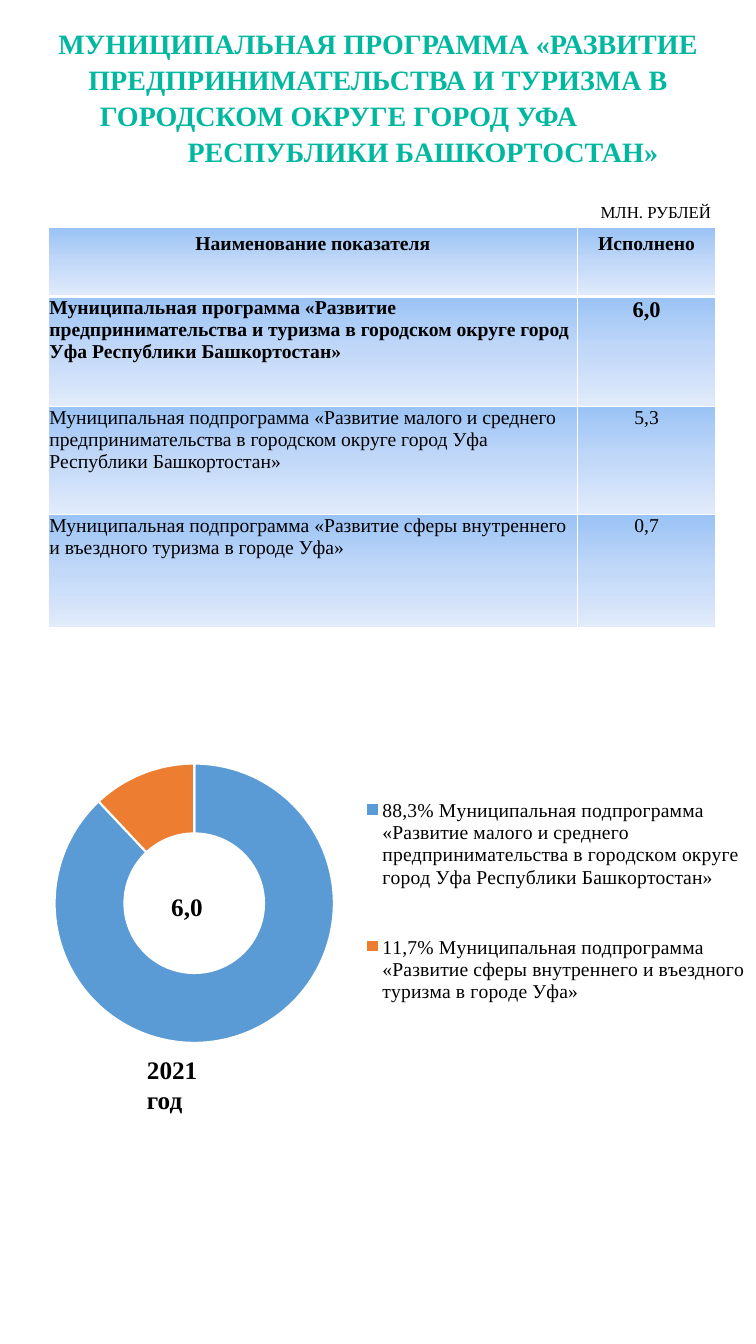
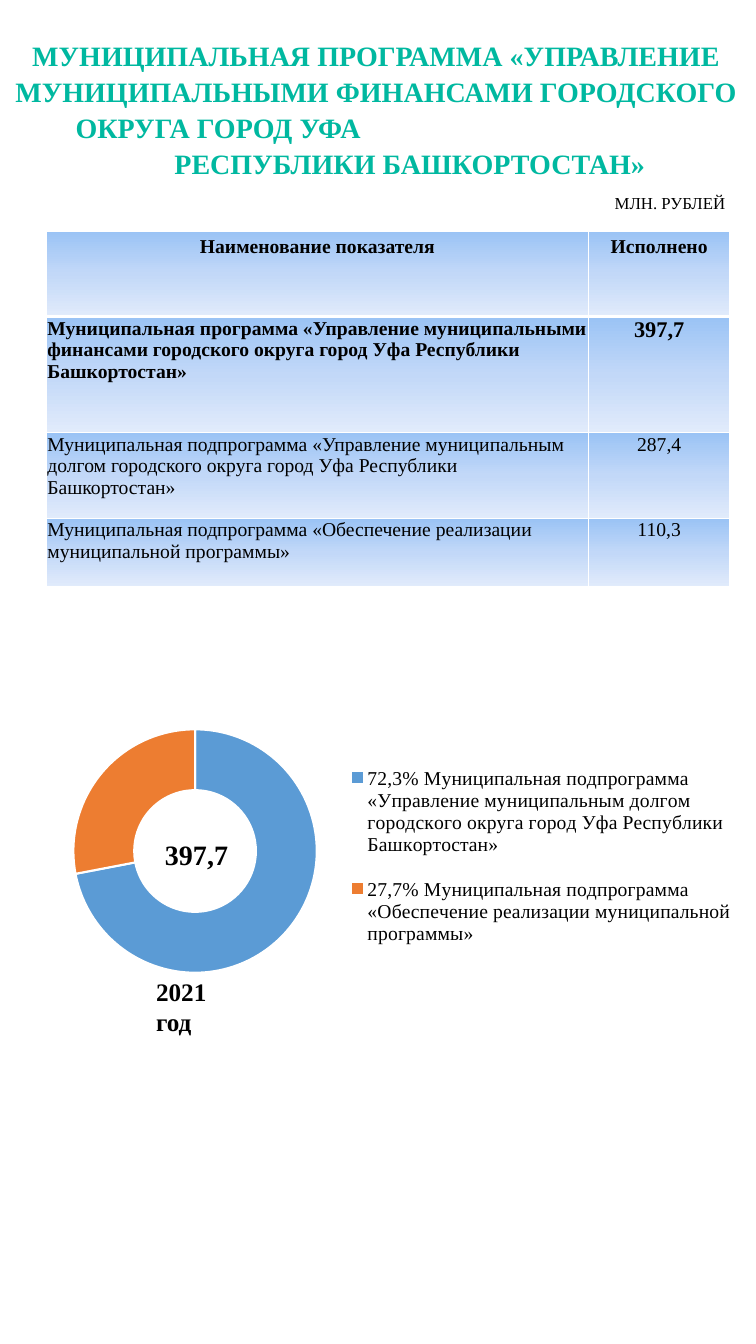
from dataclasses import dataclass

from lxml import etree
from pptx import Presentation
from pptx.chart.data import CategoryChartData
from pptx.dml.color import RGBColor
from pptx.enum.chart import XL_CHART_TYPE, XL_LEGEND_POSITION
from pptx.enum.text import MSO_ANCHOR, MSO_AUTO_SIZE, PP_ALIGN
from pptx.oxml import parse_xml
from pptx.oxml.ns import nsdecls, qn
from pptx.util import Inches, Pt

DOUGHNUT = XL_CHART_TYPE.DOUGHNUT
LEGEND_RIGHT = XL_LEGEND_POSITION.RIGHT
MIDDLE = MSO_ANCHOR.MIDDLE
TOP = MSO_ANCHOR.TOP
NO_AUTOFIT = MSO_AUTO_SIZE.NONE
CENTER = PP_ALIGN.CENTER
LEFT = PP_ALIGN.LEFT

FONT = "Times New Roman"
COLORS = {
    "title": "00B8A0",
    "text": "000000",
    "white": "FFFFFF",
    "main_slice": "5B9BD5",
    "second_slice": "ED7D31",
}
CELL_GRADIENT = ((0, "9AC3F5"), (50, "C2D8F8"), (100, "E1EBFB"))
HEADERS = ("Наименование показателя", "Исполнено")

Box = tuple[float, float, float, float]
Row = tuple[str, str]


@dataclass
class Label:
    text: str
    box: Box
    size: int
    bold: bool = True
    wrap: bool = False
    align: PP_ALIGN = LEFT
    anchor: MSO_ANCHOR = TOP


@dataclass
class ProgramTable:
    position: tuple[float, float]
    columns: tuple[float, float]
    heights: tuple[float, ...]
    rows: tuple[Row, ...]


@dataclass
class SharesChart:
    box: Box
    font: str
    plot: Box
    legend: Box
    shares: tuple[tuple[str, int], ...]


@dataclass
class ProgramSlide:
    title_box: Box
    title_lines: tuple[str, str, str]
    title_indent: float
    table: ProgramTable
    chart: SharesChart
    labels: tuple[Label, ...]


SMALL_BUSINESS = (
    "Муниципальная подпрограмма «Развитие малого и среднего предпринимательства "
    "в городском округе город Уфа Республики Башкортостан»"
)
TOURISM = (
    "Муниципальная подпрограмма «Развитие сферы внутреннего и въездного туризма "
    "в городе Уфа»"
)
DEBT = (
    "Муниципальная подпрограмма «Управление муниципальным долгом городского "
    "округа город Уфа Республики Башкортостан»"
)
SUPPORT = (
    "Муниципальная подпрограмма «Обеспечение реализации муниципальной программы»"
)

PROGRAMS = (
    ProgramSlide(
        title_box=(0, 0.18, 7.5, 1.54),
        title_lines=(
            "МУНИЦИПАЛЬНАЯ ПРОГРАММА «РАЗВИТИЕ ПРЕДПРИНИМАТЕЛЬСТВА И ТУРИЗМА В",
            "ГОРОДСКОМ ОКРУГЕ ГОРОД УФА",
            "РЕСПУБЛИКИ БАШКОРТОСТАН»",
        ),
        title_indent=0.89,
        table=ProgramTable(
            position=(0.48, 2.26),
            columns=(5.25, 1.37),
            heights=(0.68, 1.09, 1.07, 1.13),
            rows=(
                (
                    "Муниципальная программа «Развитие предпринимательства и туризма "
                    "в городском округе город Уфа Республики Башкортостан»",
                    "6,0",
                ),
                (SMALL_BUSINESS, "5,3"),
                (TOURISM, "0,7"),
            ),
        ),
        chart=SharesChart(
            box=(0, 7.2, 7.5, 3.7),
            font=FONT,
            plot=(0.072, 0.101, 0.37, 0.749),
            legend=(0.47, 0.07, 0.53, 0.8),
            shares=((f"88,3% {SMALL_BUSINESS}", 88), (f"11,7% {TOURISM}", 12)),
        ),
        labels=(
            Label("6,0", (1.6, 8.79, 0.52, 0.4), 18),
            Label("2021 год", (1.36, 10.41, 1, 0.45), 18),
            Label("МЛН. РУБЛЕЙ", (5.86, 1.95, 1.5, 0.3), 12, bold=False, wrap=True),
        ),
    ),
    ProgramSlide(
        title_box=(-0.02, 0.3, 7.5, 1.54),
        title_lines=(
            "МУНИЦИПАЛЬНАЯ ПРОГРАММА «УПРАВЛЕНИЕ МУНИЦИПАЛЬНЫМИ ФИНАНСАМИ ГОРОДСКОГО",
            "ОКРУГА ГОРОД УФА",
            "РЕСПУБЛИКИ БАШКОРТОСТАН»",
        ),
        title_indent=0.67,
        table=ProgramTable(
            position=(0.46, 2.29),
            columns=(5.38, 1.4),
            heights=(0.85, 1.15, 0.85, 0.68),
            rows=(
                (
                    "Муниципальная программа «Управление муниципальными финансами "
                    "городского округа город Уфа Республики Башкортостан»",
                    "397,7",
                ),
                (DEBT, "287,4"),
                (SUPPORT, "110,3"),
            ),
        ),
        chart=SharesChart(
            box=(0, 6.59, 7.43, 3.77),
            font="Calibri",
            plot=(0.098, 0.17, 0.325, 0.642),
            legend=(0.455, 0.21, 0.535, 0.59),
            shares=((f"72,3% {DEBT}", 72), (f"27,7% {SUPPORT}", 28)),
        ),
        labels=(
            Label("397,7", (1.4, 8.21, 1.1, 0.52), 20, wrap=True, align=CENTER,
                  anchor=MIDDLE),
            Label("2021 год", (1.45, 9.63, 1, 0.45), 18),
            Label("МЛН. РУБЛЕЙ", (6, 1.86, 1.5, 0.3), 12, bold=False, wrap=True),
        ),
    ),
)


def style_font(font, size: int, bold: bool = False, color: str = "text",
               name: str = FONT) -> None:
    font.name = name
    font.size = Pt(size)
    font.bold = bold
    font.color.rgb = RGBColor.from_string(COLORS[color])


def add_title(slide, program: ProgramSlide) -> None:
    title = slide.shapes.title
    title.left, title.top, title.width, title.height = map(Inches, program.title_box)
    frame = title.text_frame
    frame.text = "\n".join(program.title_lines)
    frame.word_wrap = True
    frame.auto_size = NO_AUTOFIT
    frame.vertical_anchor = MIDDLE
    for paragraph in frame.paragraphs:
        paragraph.alignment = CENTER
        paragraph.line_spacing = 1.07
        paragraph.space_before = Pt(0)
        style_font(paragraph.runs[0].font, 20, True, "title")
    # The middle line stands left of the centre
    shifted_line = frame.paragraphs[1]
    shifted_line.alignment = LEFT
    properties = shifted_line._p.get_or_add_pPr()
    properties.set("marL", str(Inches(program.title_indent)))
    properties.set("indent", "0")


def add_label(slide, label: Label) -> None:
    frame = slide.shapes.add_textbox(*map(Inches, label.box)).text_frame
    frame.text = label.text
    frame.word_wrap = label.wrap
    frame.vertical_anchor = label.anchor
    paragraph = frame.paragraphs[0]
    paragraph.alignment = label.align
    style_font(paragraph.runs[0].font, label.size, label.bold)


def paint_cell(cell, is_header: bool) -> None:
    """Set the white borders and the vertical gradient of a cell."""
    properties = cell._tc.get_or_add_tcPr()
    for side in "LRTB":
        width = Pt(3 if is_header and side == "B" else 1)
        properties.append(parse_xml(
            f'<a:ln{side} {nsdecls("a")} w="{width}"><a:solidFill>'
            f'<a:srgbClr val="{COLORS["white"]}"/></a:solidFill></a:ln{side}>'
        ))
    stops = "".join(
        f'<a:gs pos="{position * 1000}"><a:srgbClr val="{color}"/></a:gs>'
        for position, color in CELL_GRADIENT
    )
    properties.append(parse_xml(
        f'<a:gradFill {nsdecls("a")}><a:gsLst>{stops}</a:gsLst>'
        '<a:lin ang="5400000" scaled="0"/></a:gradFill>'
    ))


def add_program_table(slide, spec_table: ProgramTable) -> None:
    rows = (HEADERS, *spec_table.rows)
    table = slide.shapes.add_table(
        len(rows), len(HEADERS), *map(Inches, spec_table.position),
        Inches(sum(spec_table.columns)), Inches(sum(spec_table.heights)),
    ).table
    for column, width in zip(table.columns, spec_table.columns):
        column.width = Inches(width)
    for row_index, (texts, height) in enumerate(zip(rows, spec_table.heights)):
        table.rows[row_index].height = Inches(height)
        is_header, is_total = row_index == 0, row_index == 1
        for column_index, text in enumerate(texts):
            cell = table.cell(row_index, column_index)
            cell.text = text
            if not is_header:
                cell.margin_left = cell.margin_right = cell.margin_top = Inches(0.01)
                cell.margin_bottom = 0
            paragraph = cell.text_frame.paragraphs[0]
            paragraph.alignment = CENTER if is_header or column_index else LEFT
            size = 16 if is_total and column_index else 14
            style_font(paragraph.runs[0].font, size, is_header or is_total)
            paint_cell(cell, is_header)


def chart_layout(box: Box, inner: bool = False):
    target = '<c:layoutTarget val="inner"/>' if inner else ""
    modes = '<c:xMode val="edge"/><c:yMode val="edge"/>'
    sizes = "".join(f'<c:{key} val="{value}"/>' for key, value in zip("xywh", box))
    return parse_xml(
        f'<c:layout {nsdecls("c")}><c:manualLayout>{target}{modes}{sizes}'
        '</c:manualLayout></c:layout>'
    )


def add_shares_chart(slide, shares_chart: SharesChart) -> None:
    data = CategoryChartData()
    data.categories = [name for name, _ in shares_chart.shares]
    data.add_series("Series 1", [share for _, share in shares_chart.shares])
    chart = slide.shapes.add_chart(
        DOUGHNUT, *map(Inches, shares_chart.box), data
    ).chart
    chart.has_title = False
    style_font(chart.font, 10, name=shares_chart.font)

    # Slices
    plot = chart.plots[0]
    plot.vary_by_categories = True
    plot.has_data_labels = False
    for index, color in enumerate(("main_slice", "second_slice")):
        point_format = plot.series[0].points[index].format
        point_format.fill.solid()
        point_format.fill.fore_color.rgb = RGBColor.from_string(COLORS[color])
        point_format.line.color.rgb = RGBColor.from_string(COLORS["white"])
        point_format.line.width = Pt(1.5)

    # Legend
    chart.has_legend = True
    chart.legend.position = LEGEND_RIGHT
    chart.legend.include_in_layout = False
    style_font(chart.legend.font, 14)

    # Hole and manual layout
    plot_area = chart._chartSpace.chart.plotArea
    doughnut = plot_area.find(qn("c:doughnutChart"))
    hole = doughnut.find(qn("c:holeSize"))
    if hole is None:
        hole = etree.SubElement(doughnut, qn("c:holeSize"))
    hole.set("val", "75")
    legend = chart._chartSpace.chart.find(qn("c:legend"))
    for parent in (plot_area, legend):
        for layout in parent.findall(qn("c:layout")):
            parent.remove(layout)
    plot_area.insert(0, chart_layout(shares_chart.plot, inner=True))
    legend.insert(1, chart_layout(shares_chart.legend))


def main() -> None:
    presentation = Presentation()
    presentation.slide_width = Inches(7.5)
    presentation.slide_height = Inches(13.33)
    for program in PROGRAMS:
        slide = presentation.slides.add_slide(presentation.slide_layouts[5])
        add_title(slide, program)
        add_shares_chart(slide, program.chart)
        add_program_table(slide, program.table)
        for label in program.labels:
            add_label(slide, label)
    presentation.save("out.pptx")


if __name__ == "__main__":
    main()
